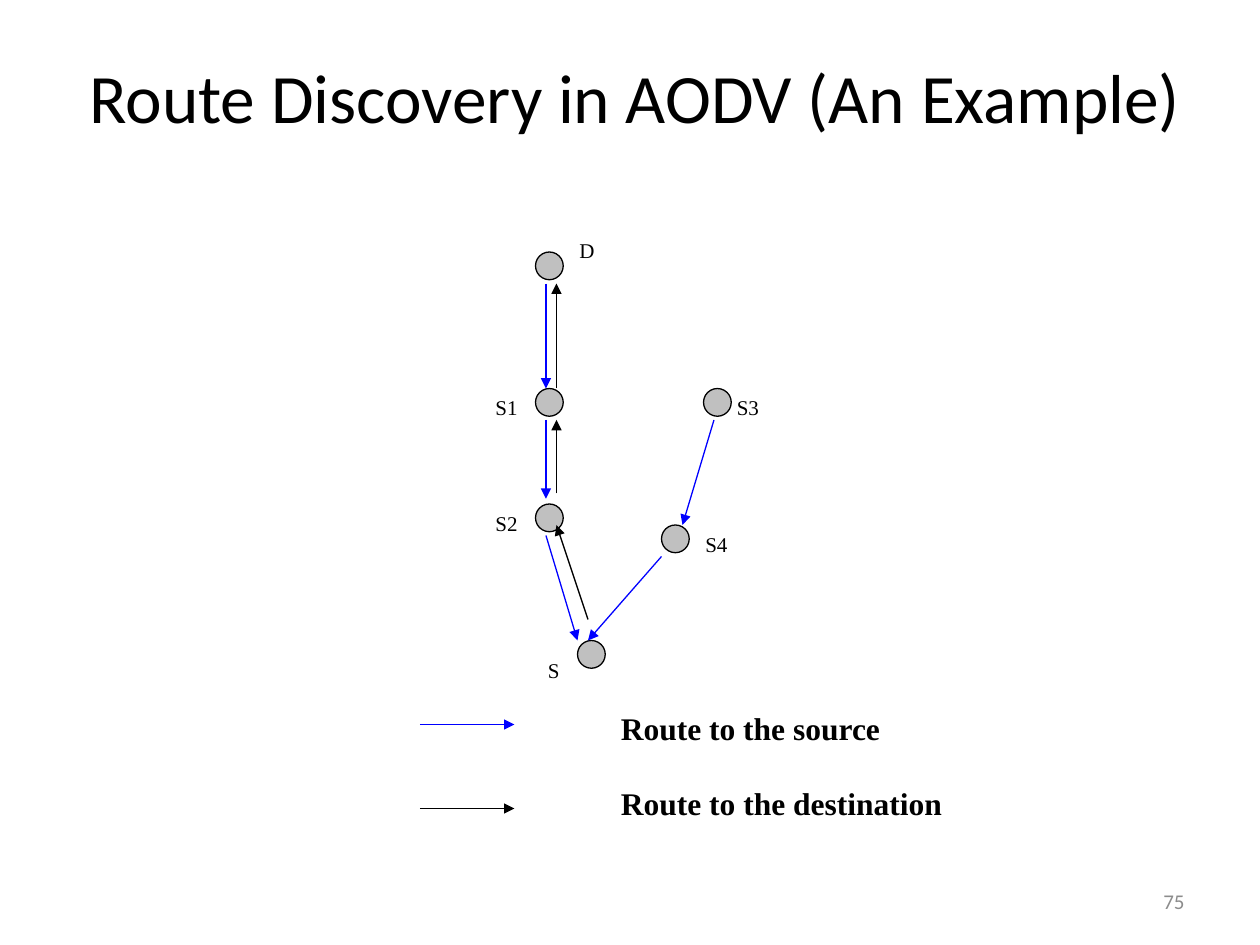
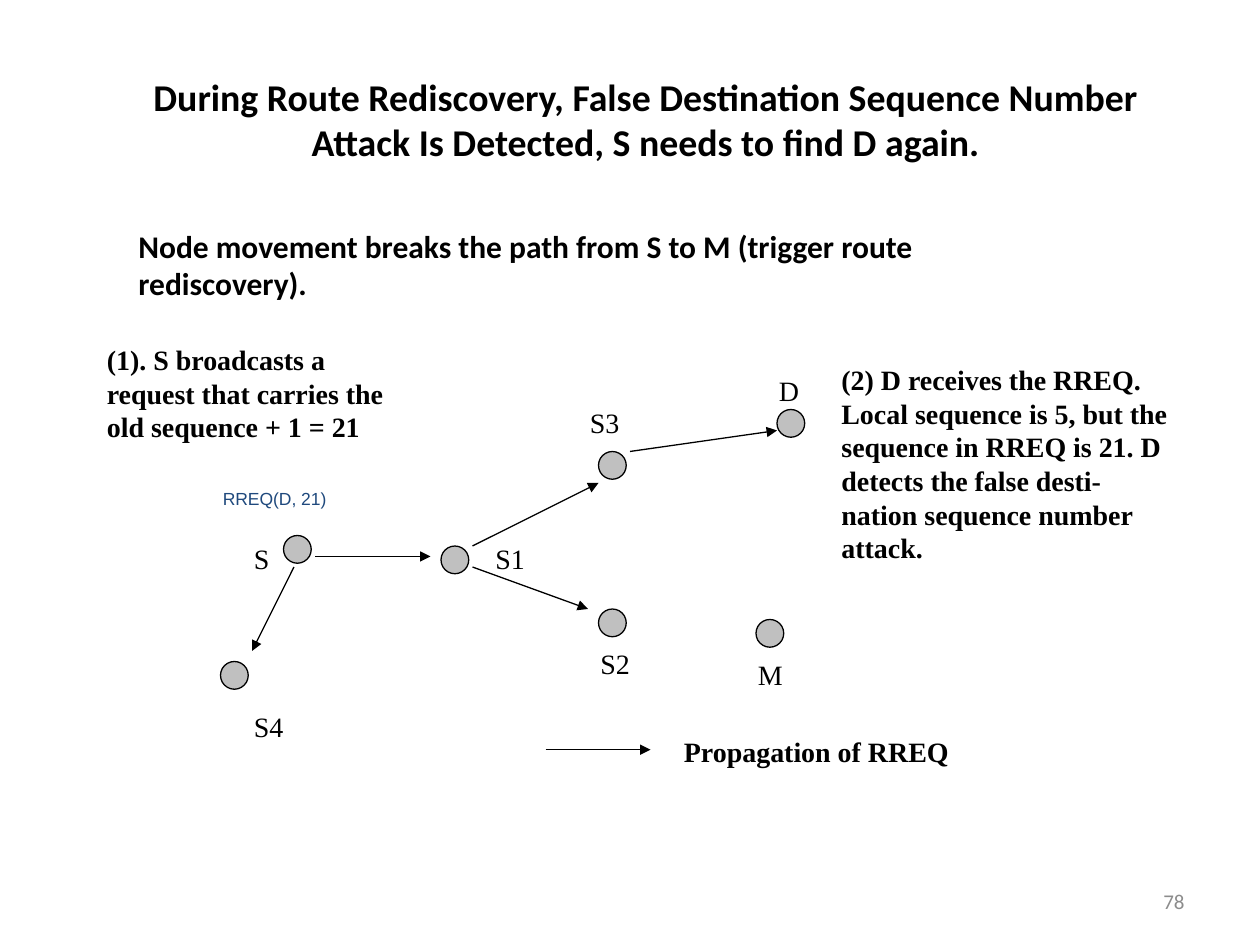
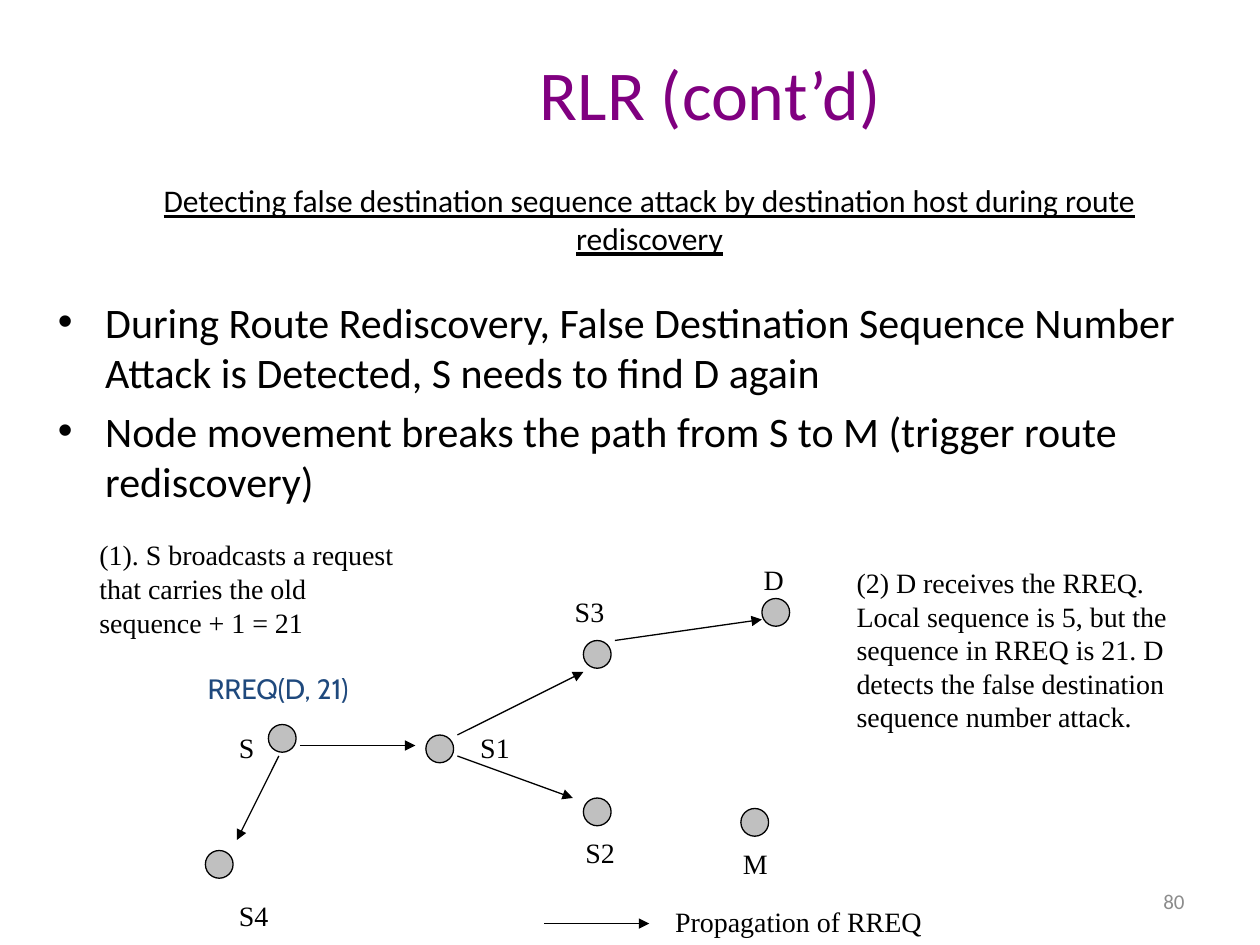
"""Build three slides on AODV route discovery and false sequence detection."""
from lxml.etree import SubElement
from pptx import Presentation
from pptx.dml.color import RGBColor
from pptx.enum.shapes import MSO_CONNECTOR, MSO_SHAPE
from pptx.enum.text import MSO_ANCHOR, MSO_AUTO_SIZE, PP_ALIGN
from pptx.oxml.ns import qn
from pptx.util import Inches, Pt

COLORS = {"black": "000000", "blue": "0000FF", "purple": "800080",
          "navy": "1F497D", "number": "8C8C8C", "node": "C0C0C0"}
SERIF, SANS = "Times New Roman", "Calibri"
CELL = 1 / 12
NODE_SIZE = 0.22
TITLE_ONLY, TITLE_AND_BODY = 5, 1

ROUTES = {
    "label_size": 12,
    "nodes": {"D": ((51, 24), (54, 22)), "S1": ((51, 37), (46, 37)),
              "S2": ((51, 48), (46, 48)), "S": ((55, 61), (51, 62)),
              "S3": ((67, 37), (69, 37)), "S4": ((63, 50), (66, 50))},
    "arrows": {
        "blue": [((52, 51), (55, 61)), ((63, 53), (56, 61)), ((52, 27), (52, 37)),
                 ((52, 40), (52, 47.5)), ((68, 40), (65, 50)), ((40, 69), (49, 69))],
        "black": [((53, 37), (53, 27)), ((53, 47), (53, 40)), ((56, 59), (53, 50)),
                  ((40, 77), (49, 77))]},
}
REDISCOVERY = {
    "label_size": 16,
    "nodes": {"D": ((74, 39), (73, 35)), "S3": ((57, 43), (55, 38)),
              "S": ((27, 51), (23, 51)), "M": ((72, 59), (71, 62)),
              "S2": ((57, 58), (56, 61)), "S1": ((42, 52), (46, 51)),
              "S4": ((21, 63), (23, 67))},
    "arrows": {"black": [((30, 53), (41, 53)), ((45, 52), (57, 46)),
                         ((45, 54), (56, 58)), ((28, 54), (24, 62)),
                         ((60, 43), (74, 41))]},
}
REQUEST = "RREQ(D, 21)"
BROADCAST = "(1). S broadcasts a request that carries the old sequence + 1 = 21"
DETECTION = ("(2) D receives the RREQ. Local sequence is 5, but the sequence in RREQ "
             "is 21. D detects the false {} sequence number attack.")
BOLD_SERIF = {"font": SERIF, "bold": True}

SLIDES = [
    {"number": "75", "title": "Route Discovery in AODV (An Example)",
     "title_area": (0.5, 0.3, 9.08, 0.92), "title_style": {"size": 39.6},
     "diagram": ROUTES, "shift": (0, 0),
     "texts": [
         ("Route to the source", (4.83, 5.58, 2.67, 0.4), {"size": 18, **BOLD_SERIF}),
         ("Route to the destination", (4.83, 6.17, 3.08, 0.4),
          {"size": 18, **BOLD_SERIF})]},
    {"number": "78",
     "title": "During Route Rediscovery, False Destination Sequence Number "
              "Attack Is Detected, S needs to find D again.",
     "title_area": (0.75, 0.51, 8.75, 0.87),
     "title_style": {"size": 21.6, "bold": True},
     "diagram": REDISCOVERY, "shift": (0, 0), "legend": (4.33, 5.95),
     "texts": [
         (REQUEST, (1.67, 3.75, 1.67, 0.42),
          {"size": 10, "font": "Arial", "color": "navy", "middle": True}),
         (BROADCAST, (0.75, 2.67, 2.58, 0.9), BOLD_SERIF),
         (DETECTION.format("desti-nation"), (6.58, 2.83, 2.83, 1.7), BOLD_SERIF),
         ("Propagation of RREQ", (5.33, 5.78, 3, 0.37), BOLD_SERIF),
         ("Node movement breaks the path from S to M (trigger route rediscovery).",
          (1, 1.75, 7.42, 0.7), {"size": 18, "bold": True})]},
    {"number": "80", "title": "RLR (cont’d)",
     "title_area": (1.27, 0.31, 8.73, 0.85),
     "title_style": {"size": 40, "color": "purple"},
     "bullets": ["During Route Rediscovery, False Destination Sequence Number "
                 "Attack is Detected, S needs to find D again",
                 "Node movement breaks the path from S to M (trigger route rediscovery)"],
     "bullets_area": (0.36, 2.3, 9.11, 1.89),
     "diagram": REDISCOVERY, "shift": (-0.12, 1.5), "legend": (4.32, 7.33),
     "texts": [
         (REQUEST, (1.55, 5.25, 1.67, 0.42),
          {"font": "Cabin", "color": "navy", "middle": True}),
         (BROADCAST, (0.69, 4.22, 2.58, 0.9), {"font": SERIF}),
         (DETECTION.format("destination"), (6.7, 4.44, 2.83, 1.44), {"font": SERIF}),
         ("Propagation of RREQ", (5.26, 7.13, 3, 0.37), {"font": SERIF}),
         ("Detecting false destination sequence attack by destination host "
          "during route rediscovery", (0.7, 1.39, 8.91, 0.9),
          {"size": 18, "underline": True, "align": PP_ALIGN.CENTER})]},
]


def rgb(name):
    return RGBColor.from_string(COLORS[name])


def place(box, area):
    box.left, box.top, box.width, box.height = map(Inches, area)


def style_text(box, size=16, font=SANS, color="black", bold=False, underline=False,
               align=None, middle=False):
    frame = box.text_frame
    frame.word_wrap = True
    frame.auto_size = MSO_AUTO_SIZE.NONE
    frame.vertical_anchor = MSO_ANCHOR.MIDDLE if middle else MSO_ANCHOR.TOP
    for para in frame.paragraphs:
        para.alignment = align
        for span in para.runs:
            span.font.size, span.font.name = Pt(size), font
            span.font.bold, span.font.underline = bold, underline
            span.font.color.rgb = rgb(color)


def add_text(page, text, area, **style):
    box = page.shapes.add_textbox(*map(Inches, area))
    box.text_frame.text = text
    style_text(box, **style)


def add_node(page, left, top):
    node = page.shapes.add_shape(MSO_SHAPE.OVAL, Inches(left), Inches(top),
                                 Inches(NODE_SIZE), Inches(NODE_SIZE))
    node.shadow.inherit = False
    node.fill.solid()
    node.fill.fore_color.rgb = rgb("node")
    node.line.color.rgb = rgb("black")
    node.line.width = Pt(0.75)


def add_arrow(page, start, end, color="black"):
    arrow = page.shapes.add_connector(MSO_CONNECTOR.STRAIGHT,
                                      *map(Inches, (*start, *end)))
    arrow.line.color.rgb = rgb(color)
    arrow.line.width = Pt(0.75)
    SubElement(arrow.line._get_or_add_ln(), qn("a:tailEnd"), type="triangle")
    SubElement(arrow._element.spPr, qn("a:effectLst"))


def add_diagram(page, diagram, shift):
    def position(cell):
        return tuple(offset + count * CELL for offset, count in zip(shift, cell))

    for name, (node, label) in diagram["nodes"].items():
        add_node(page, *position(node))
        add_text(page, name, (*position(label), 0.5, 0.25), font=SERIF,
                 size=diagram["label_size"], align=PP_ALIGN.JUSTIFY)
    for color, arrows in diagram["arrows"].items():
        for start, end in arrows:
            add_arrow(page, position(start), position(end), color)


def build_slide(deck, content):
    bullets = content.get("bullets")
    layout = deck.slide_layouts[TITLE_AND_BODY if bullets else TITLE_ONLY]
    page = deck.slides.add_slide(layout)
    title = page.shapes.title
    title.text_frame.text = content["title"]
    place(title, content["title_area"])
    style_text(title, align=PP_ALIGN.CENTER, middle=True, **content["title_style"])
    if bullets:
        body = page.placeholders[1]
        body.text_frame.text = "\n".join(bullets)
        place(body, content["bullets_area"])
        style_text(body, size=24)
    add_text(page, content["number"], (7.17, 6.95, 2.33, 0.4), size=12,
             color="number", align=PP_ALIGN.RIGHT, middle=True)
    add_diagram(page, content["diagram"], content["shift"])
    if "legend" in content:
        left, top = content["legend"]
        add_arrow(page, (left, top), (left + 10 * CELL, top))
    for text, area, style in content["texts"]:
        add_text(page, text, area, **style)


def main():
    deck = Presentation()
    deck.slide_width, deck.slide_height = Inches(10), Inches(7.5)
    for content in SLIDES:
        build_slide(deck, content)
    deck.save("out.pptx")


if __name__ == "__main__":
    main()
